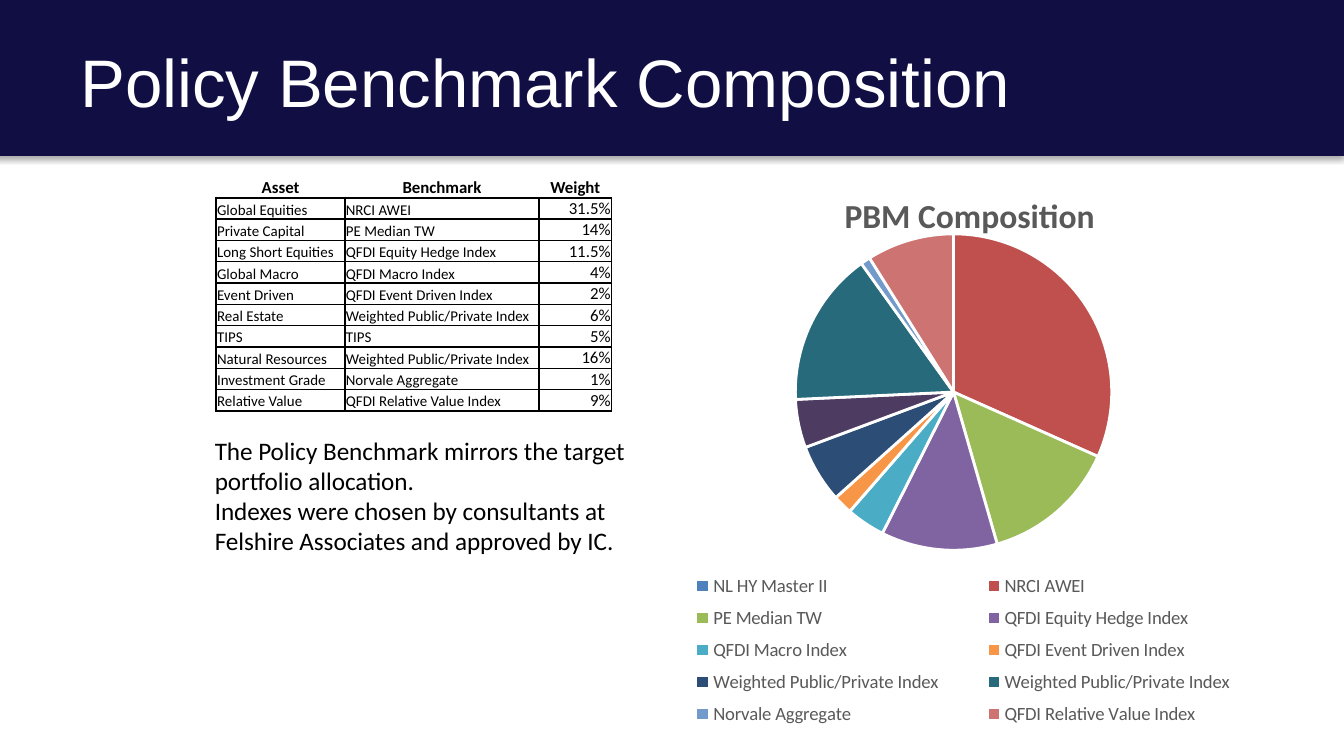
from dataclasses import dataclass

from pptx import Presentation
from pptx.chart.data import CategoryChartData
from pptx.dml.color import RGBColor as Color
from pptx.enum.chart import XL_CHART_TYPE as ChartType, XL_LEGEND_POSITION as LegendPosition
from pptx.enum.shapes import MSO_SHAPE as Preset
from pptx.enum.text import MSO_ANCHOR as Anchor, PP_ALIGN as Align
from pptx.oxml import parse_xml
from pptx.oxml.ns import nsdecls
from pptx.util import Pt


@dataclass(frozen=True)
class Theme:
    banner: str = "100E42"
    white: str = "FFFFFF"
    black: str = "000000"
    gray: str = "595959"
    title_font: str = "Arial"
    body_font: str = "Calibri"
    title_size: float = 36
    chart_title_size: float = 18
    body_size: float = 13.5
    legend_size: float = 10
    table_size: float = 9
    label_size: float = 8


HEADINGS = ("Asset", "Benchmark", "Weight")
HOLDINGS = [
    ("Global Equities", "NRCI AWEI", "31.5%"),
    ("Private Capital", "PE Median TW", "14%"),
    ("Long Short Equities", "QFDI Equity Hedge Index", "11.5%"),
    ("Global Macro", "QFDI Macro Index", "4%"),
    ("Event Driven", "QFDI Event Driven Index", "2%"),
    ("Real Estate", "Weighted Public/Private Index", "6%"),
    ("TIPS", "TIPS", "5%"),
    ("Natural Resources", "Weighted Public/Private Index", "16%"),
    ("Investment Grade", "Norvale Aggregate", "1%"),
    ("Relative Value", "QFDI Relative Value Index", "9%"),
]
SLICES = [
    ("NL HY Master II", 0, "4F81BD"),
    ("NRCI AWEI", 32, "C0504D"),
    ("PE Median TW", 14, "9BBB59"),
    ("QFDI Equity Hedge Index", 12, "8064A2"),
    ("QFDI Macro Index", 4, "4BACC6"),
    ("QFDI Event Driven Index", 2, "F79646"),
    ("Weighted Public/Private Index", 6, "2C4D75"),
    ("", None, "772C2A"),
    ("", None, "5F7530"),
    ("", 5, "4D3B62"),
    ("Weighted Public/Private Index", 16, "276A7C"),
    ("", None, "B65708"),
    ("Norvale Aggregate", 1, "729ACA"),
    ("QFDI Relative Value Index", 9, "CD7371"),
]
NOTES = [
    "The Policy Benchmark mirrors the target portfolio allocation.",
    "Indexes were chosen by consultants at Felshire Associates and approved by IC.",
]


class SlideBuilder:
    """Draws themed elements on one slide."""

    def __init__(self, slide, theme):
        self.slide = slide
        self.theme = theme

    def style(self, font, size, color, name=None, bold=False):
        font.size = Pt(size)
        font.bold = bold
        font.name = name or self.theme.body_font
        font.color.rgb = Color.from_string(color)

    def banner(self, left, top, width, height):
        shape = self.slide.shapes.add_shape(Preset.RECTANGLE, Pt(left), Pt(top), Pt(width), Pt(height))
        shape.fill.solid()
        shape.fill.fore_color.rgb = Color.from_string(self.theme.banner)
        shape.line.fill.background()
        shape._element.spPr.append(parse_xml(
            f'<a:effectLst {nsdecls("a")}><a:outerShdw blurRad="{Pt(3.1)}" dist="{Pt(1.8)}" '
            f'dir="5400000" rotWithShape="0"><a:srgbClr val="{self.theme.black}">'
            '<a:alpha val="35000"/></a:srgbClr></a:outerShdw></a:effectLst>'))

    def text(self, box, lines, size, color, name=None, spacing=None):
        frame = self.slide.shapes.add_textbox(*map(Pt, box)).text_frame
        frame.word_wrap = True
        for index, line in enumerate(lines):
            paragraph = frame.add_paragraph() if index else frame.paragraphs[0]
            paragraph.line_spacing = spacing
            run = paragraph.add_run()
            run.text = line
            self.style(run.font, size, color, name)

    def borders(self, cell, drawn):
        properties = cell._tc.get_or_add_tcPr()
        for side in "LRTB":
            paint = f'<a:solidFill><a:srgbClr val="{self.theme.black}"/></a:solidFill>' if side in drawn else "<a:noFill/>"
            properties.append(parse_xml(f'<a:ln{side} {nsdecls("a")} w="{Pt(1)}">{paint}</a:ln{side}>'))

    def cell(self, cell, text, size, align, bold, drawn):
        cell.margin_left = cell.margin_right = cell.margin_top = Pt(0.5)
        cell.margin_bottom = 0
        cell.vertical_anchor = Anchor.BOTTOM
        self.borders(cell, drawn)
        cell.fill.background()
        paragraph = cell.text_frame.paragraphs[0]
        paragraph.alignment = align
        run = paragraph.add_run()
        run.text = text
        self.style(run.font, size, self.theme.black, bold=bold)

    def table(self, left, top, widths, row_height, headings, rows):
        theme = self.theme
        count = len(rows) + 1
        table = self.slide.shapes.add_table(
            count, len(widths), Pt(left), Pt(top), Pt(sum(widths)), Pt(row_height * count)).table
        table.first_row = table.horz_banding = False
        for column, width in zip(table.columns, widths):
            column.width = Pt(width)
        for row in table.rows:
            row.height = Pt(row_height)
        for index, heading in enumerate(headings):
            self.cell(table.cell(0, index), heading, theme.table_size, Align.CENTER, True, "B")
        body = ((theme.label_size, Align.LEFT), (theme.label_size, Align.LEFT), (theme.table_size, Align.RIGHT))
        for number, row in enumerate(rows, 1):
            for index, (text, (size, align)) in enumerate(zip(row, body)):
                self.cell(table.cell(number, index), text, size, align, False, "LRTB")

    def pie(self, box, title, slices, plot, legend):
        theme = self.theme
        labels, weights, colors = zip(*slices)
        data = CategoryChartData()
        data.categories = labels
        data.add_series("Series 1", weights)
        chart = self.slide.shapes.add_chart(ChartType.PIE, *map(Pt, box), data).chart
        self.style(chart.font, theme.legend_size, theme.black)
        chart.has_title = True
        run = chart.chart_title.text_frame.paragraphs[0].add_run()
        run.text = title
        self.style(run.font, theme.chart_title_size, theme.gray, bold=True)
        chart.plots[0].vary_by_categories = True
        for index, color in enumerate(colors):
            slice_format = chart.plots[0].series[0].points[index].format
            slice_format.fill.solid()
            slice_format.fill.fore_color.rgb = Color.from_string(color)
            slice_format.line.color.rgb = Color.from_string(theme.white)
            slice_format.line.width = Pt(1.5)
        self.place(chart._chartSpace.chart.plotArea, 0, plot, '<c:layoutTarget val="inner"/>')
        self.legend(chart, [index for index, label in enumerate(labels) if not label], legend)

    def legend(self, chart, hidden, area):
        chart.has_legend = True
        chart.legend.position = LegendPosition.BOTTOM
        chart.legend.include_in_layout = False
        self.style(chart.legend.font, self.theme.legend_size, self.theme.gray)
        element = chart.legend._element
        for position, index in enumerate(hidden, 1):
            element.insert(position, parse_xml(
                f'<c:legendEntry {nsdecls("c")}><c:idx val="{index}"/><c:delete val="1"/></c:legendEntry>'))
        self.place(element, len(hidden) + 1, area)

    def place(self, element, position, area, target=""):
        for layout in element.findall("{*}layout"):
            element.remove(layout)
        modes = '<c:xMode val="edge"/><c:yMode val="edge"/>'
        sizes = "".join(f'<c:{key} val="{value}"/>' for key, value in zip("xywh", area))
        element.insert(position, parse_xml(
            f'<c:layout {nsdecls("c")}><c:manualLayout>{target}{modes}{sizes}</c:manualLayout></c:layout>'))


def main():
    theme = Theme()
    presentation = Presentation()
    presentation.slide_width, presentation.slide_height = Pt(720), Pt(405)
    builder = SlideBuilder(presentation.slides.add_slide(presentation.slide_layouts[6]), theme)
    builder.banner(-3, 0, 723, 83.5)
    builder.text((36, 23, 648, 61), ["Policy Benchmark Composition"],
                 theme.title_size, theme.white, theme.title_font, 0.9)
    builder.table(115.8, 94.5, (69, 104, 38.8), 11.45, HEADINGS, HOLDINGS)
    builder.pie((346.5, 90, 346, 304), "PBM Composition", SLICES,
                (0.23, 0.11, 0.49, 0.57), (0.01, 0.7, 0.96, 0.3))
    builder.text((108, 229.5, 252, 73), NOTES, theme.body_size, theme.black)
    presentation.save("out.pptx")


if __name__ == "__main__":
    main()
